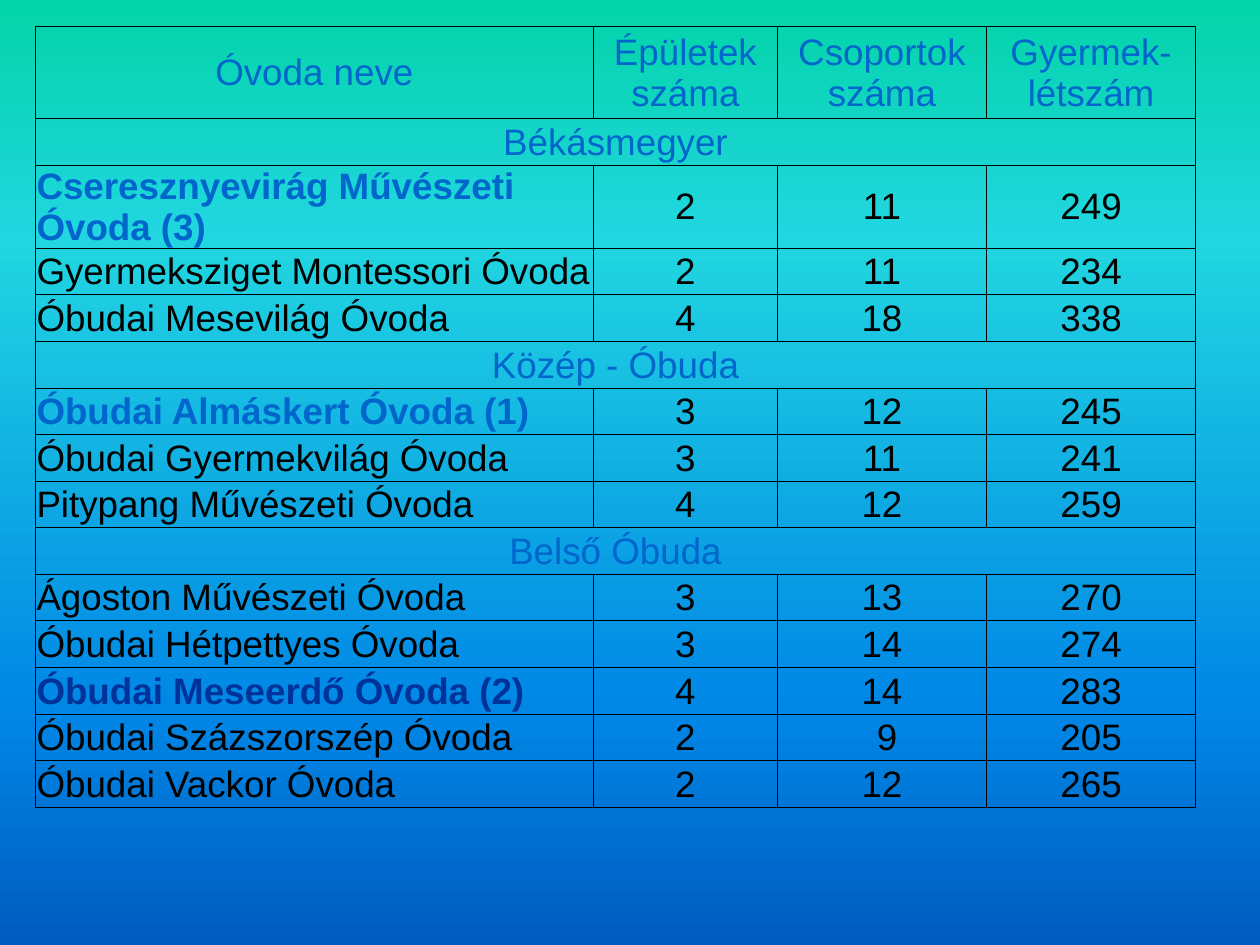
from copy import deepcopy
from typing import NamedTuple

from lxml.etree import SubElement as Sub
from pptx import Presentation
from pptx.dml.color import RGBColor as Rgb
from pptx.enum.text import MSO_ANCHOR as Anchor, PP_ALIGN as Align
from pptx.oxml.ns import qn
from pptx.util import Inches, Pt

BLACK = Rgb(0x00, 0x00, 0x00)
BLUE = Rgb(0x00, 0x66, 0xCC)
NAVY = Rgb(0x00, 0x33, 0x99)
STOPS = [
    (0, Rgb(0x03, 0xD4, 0xA8)),
    (0.25, Rgb(0x21, 0xD6, 0xE0)),
    (0.75, Rgb(0x00, 0x87, 0xE6)),
    (1, Rgb(0x00, 0x5C, 0xBF)),
]

WIDTHS = [4.43, 1.46, 1.66, 1.66]
HEAD_H, ROW_H = 0.73, 0.37
FONT = {"name": "Arial", "size": Pt(21)}
CELL = {
    "margin_left": Inches(0.01),
    "margin_right": Inches(0.01),
    "margin_top": Inches(0.01),
    "margin_bottom": 0,
    "vertical_anchor": Anchor.MIDDLE,
}


class School(NamedTuple):
    name: str
    sites: str
    groups: str
    kids: str
    color: Rgb = BLACK
    bold: bool = False


class Area(NamedTuple):
    name: str
    schools: list[School]


HEADS = ["Óvoda neve", "Épületek száma", "Csoportok száma", "Gyermek-létszám"]
AREAS = [
    Area("Békásmegyer", [
        School("Cseresznyevirág Művészeti Óvoda (3)", "2", "11", "249", BLUE, True),
        School("Gyermeksziget Montessori Óvoda", "2", "11", "234"),
        School("Óbudai Mesevilág Óvoda", "4", "18", "338"),
    ]),
    Area("Közép - Óbuda", [
        School("Óbudai Almáskert Óvoda (1)", "3", "12", "245", BLUE, True),
        School("Óbudai Gyermekvilág Óvoda", "3", "11", "241"),
        School("Pitypang Művészeti Óvoda", "4", "12", "259"),
    ]),
    Area("Belső Óbuda", [
        School("Ágoston Művészeti Óvoda", "3", "13", "270"),
        School("Óbudai Hétpettyes Óvoda", "3", "14", "274"),
        School("Óbudai Meseerdő Óvoda (2)", "4", "14", "283", NAVY, True),
        School("Óbudai Százszorszép Óvoda", "2", " 9", "205"),
        School("Óbudai Vackor Óvoda", "2", "12", "265"),
    ]),
]


def apply(target, values: dict) -> None:
    for key, value in values.items():
        setattr(target, key, value)


def paint(slide) -> None:
    fill = slide.background.fill
    fill.gradient()
    fill.gradient_angle = 270
    stops = next(slide.element.iter(qn("a:gsLst")))
    for _ in STOPS[len(stops):]:
        stops.append(deepcopy(stops[0]))
    for stop, (place, color) in zip(fill.gradient_stops, STOPS):
        stop.position = place
        stop.color.rgb = color


def frame(cell) -> None:
    props = cell._tc.get_or_add_tcPr()
    for side in ("lnL", "lnR", "lnT", "lnB"):
        line = Sub(props, qn(f"a:{side}"), w=str(Pt(0.5)))
        Sub(Sub(line, qn("a:solidFill")), qn("a:srgbClr"), val=str(BLACK))
    cell.fill.background()
    apply(cell, CELL)


def write(cell, text: str, color: Rgb = BLACK, bold: bool = False,
          align: Align = Align.CENTER) -> None:
    par = cell.text_frame.paragraphs[0]
    par.alignment = align
    run = par.add_run()
    run.text = text
    apply(run.font, FONT | {"bold": bold})
    run.font.color.rgb = color


def add_grid(slide) -> None:
    count = 1 + sum(1 + len(area.schools) for area in AREAS)
    high = HEAD_H + ROW_H * (count - 1)
    table = slide.shapes.add_table(
        count, len(WIDTHS), Inches(0.28), Inches(0.21),
        Inches(sum(WIDTHS)), Inches(high),
    ).table
    apply(table, {"first_row": False, "horz_banding": False})
    for col, width in zip(table.columns, WIDTHS):
        col.width = Inches(width)
    for index, row in enumerate(table.rows):
        row.height = Inches(ROW_H if index else HEAD_H)
    for cell in table.iter_cells():
        frame(cell)

    for col, text in enumerate(HEADS):
        write(table.cell(0, col), text, BLUE)
    row = 1
    for area in AREAS:
        band = table.cell(row, 0)
        band.merge(table.cell(row, len(WIDTHS) - 1))
        write(band, area.name, BLUE)
        for row, school in enumerate(area.schools, row + 1):
            write(table.cell(row, 0), school.name, school.color, school.bold, Align.LEFT)
            for col, text in enumerate((school.sites, school.groups, school.kids), 1):
                write(table.cell(row, col), text)
        row += 1


def main() -> None:
    deck = Presentation()
    apply(deck, {"slide_width": Inches(10), "slide_height": Inches(7.5)})
    slide = deck.slides.add_slide(deck.slide_layouts[6])
    paint(slide)
    add_grid(slide)
    deck.save("out.pptx")


if __name__ == "__main__":
    main()
